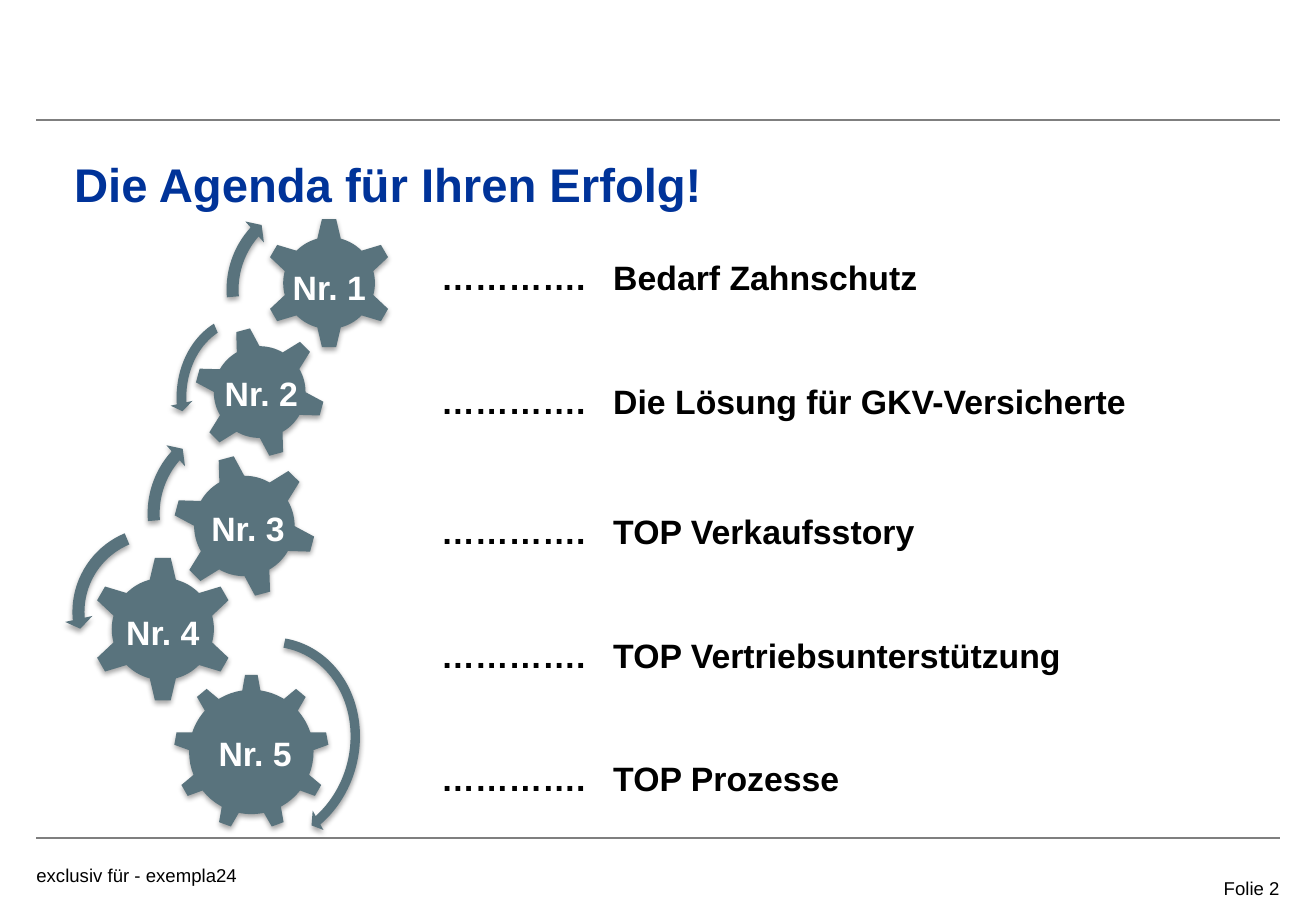
import pptx
import pptx.util
import pptx.dml.color
import pptx.enum.shapes
import pptx.enum.text
import pptx.oxml
import pptx.oxml.ns
import lxml.etree

Cm = pptx.util.Cm
Pt = pptx.util.Pt
RGBColor = pptx.dml.color.RGBColor
MSO_SHAPE = pptx.enum.shapes.MSO_SHAPE
ALIGN = pptx.enum.text.PP_ALIGN
ANCHOR = pptx.enum.text.MSO_ANCHOR
qn = pptx.oxml.ns.qn

FONT = "Arial"
BLACK = RGBColor(0, 0, 0)
WHITE = RGBColor(255, 255, 255)
GREY = RGBColor(0x7F, 0x7F, 0x7F)
BLUE = RGBColor(0x00, 0x33, 0x99)
TEAL = RGBColor(0x59, 0x73, 0x7D)

TITLE = "Die Agenda für Ihren Erfolg!"
FOOTER = "exclusiv für - exempla24"
PAGE = "Folie 2"
DOTS = "…………."
AGENDA = [
    ("Bedarf Zahnschutz", 0),
    ("Die Lösung für GKV-Versicherte", 49.3),
    ("TOP Verkaufsstory", 52.9),
    ("TOP Vertriebsunterstützung", 49.3),
    ("TOP Prozesse", 49.3),
]
GEARS = [
    (MSO_SHAPE.GEAR_6, 5.51, 4.55, 2.74, 0, (5.87, 5.36)),
    (MSO_SHAPE.GEAR_6, 4.06, 6.83, 2.74, 345, (4.45, 7.59)),
    (MSO_SHAPE.GEAR_6, 3.61, 9.5, 3, 345, (4.17, 10.41)),
    (MSO_SHAPE.GEAR_6, 1.88, 11.63, 3.05, 0, (2.39, 12.57)),
    (MSO_SHAPE.GEAR_9, 3.63, 14.1, 3.25, 0, (4.32, 15.11)),
]
UP = (MSO_SHAPE.CIRCULAR_ARROW, (0.06, 3.941, 133.138, 105.082, 0.07))
DOWN = (MSO_SHAPE.LEFT_CIRCULAR_ARROW, (0.065, 4.3, 104.891, 148.378, 0.075))
ROUND = (MSO_SHAPE.CIRCULAR_ARROW, (0.047, 2.99, 24.672, 159.711, 0.055))
ARROWS = [
    (UP, 4.57, 3.96, 4.19, 4.19, 0),
    (DOWN, 3.56, 6.45, 3.12, 3.73, 0),
    (UP, 2.92, 8.64, 4.19, 4.19, 0),
    (DOWN, 1.35, 10.85, 3.89, 3.89, 0),
    (ROUND, 3.45, 13.18, 4.19, 4.7, 14.7),
]
LEFT, RIGHT = 0.76, 26.75
RULES = [2.51, 17.53]
LABEL_WIDTH, LABEL_HEIGHT = 2.03, 1.19
TAB_STOP = 3.6


def add_rule(slide, y):
    line = slide.shapes.add_connector(
        pptx.enum.shapes.MSO_CONNECTOR.STRAIGHT, Cm(LEFT), Cm(y), Cm(RIGHT), Cm(y))
    line.line.color.rgb = GREY
    line.line.width = Pt(1)
    lxml.etree.SubElement(line._element.spPr, qn("a:effectLst"))


def add_wheel(slide, kind, left, top, width, height, rotation, adjustments=()):
    shape = slide.shapes.add_shape(kind, Cm(left), Cm(top), Cm(width), Cm(height))
    for index, value in enumerate(adjustments):
        shape.adjustments[index] = value
    shape.rotation = rotation
    shape.fill.solid()
    shape.fill.fore_color.rgb = TEAL
    shape.line.fill.background()
    shape.shadow.inherit = False
    effects = shape._element.spPr.find(qn("a:effectLst"))
    shadow = lxml.etree.SubElement(
        effects, qn("a:outerShdw"), blurRad="40000", dist="23000",
        dir="5400000", rotWithShape="0")
    color = lxml.etree.SubElement(shadow, qn("a:srgbClr"), val="000000")
    lxml.etree.SubElement(color, qn("a:alpha"), val="35000")


def add_frame(slide, left, top, width, height, wrap=True, anchor=ANCHOR.TOP):
    frame = slide.shapes.add_textbox(Cm(left), Cm(top), Cm(width), Cm(height)).text_frame
    frame.word_wrap = wrap
    frame.vertical_anchor = anchor
    frame.margin_left = frame.margin_right = 0
    frame.margin_top = frame.margin_bottom = 0
    return frame


def add_text(paragraph, text, size, color, bold=False, align=ALIGN.LEFT, spacing=1.1):
    paragraph.alignment = align
    paragraph.line_spacing = spacing
    run = paragraph.add_run()
    run.text = text
    run.font.name = FONT
    run.font.size = Pt(size)
    run.font.bold = bold
    run.font.color.rgb = color


def add_agenda(slide):
    frame = add_frame(slide, 9.22, 5.38, 17.55, 12.15)
    for index, (topic, gap) in enumerate(AGENDA):
        paragraph = frame.add_paragraph() if index else frame.paragraphs[0]
        if gap:
            paragraph.space_before = Pt(gap)
        add_text(paragraph, f"{DOTS}\t{topic}", 20, BLACK, True, spacing=1.0)
        tabs = lxml.etree.SubElement(paragraph._p.get_or_add_pPr(), qn("a:tabLst"))
        lxml.etree.SubElement(tabs, qn("a:tab"), pos=str(Cm(TAB_STOP)), algn="l")


def main():
    presentation = pptx.Presentation()
    presentation.slide_width = Cm(27.51)
    presentation.slide_height = Cm(19.05)
    slide = presentation.slides.add_slide(presentation.slide_layouts[6])

    for y in RULES:
        add_rule(slide, y)
    footer = add_frame(slide, LEFT, 17.53, 6.4, 1.52, anchor=ANCHOR.MIDDLE)
    add_text(footer.paragraphs[0], FOOTER, 11, BLACK, spacing=1.0)
    page = add_frame(slide, 23.75, 18.29, 3, 0.61)
    add_text(page.paragraphs[0], PAGE, 11, BLACK, align=ALIGN.RIGHT)
    title = add_frame(slide, 1.55, 3.12, 25.2, 1.7)
    add_text(title.paragraphs[0], TITLE, 28, BLUE, True)

    for kind, left, top, size, rotation, label in GEARS:
        add_wheel(slide, kind, left, top, size, size, rotation)
    for (kind, adjustments), left, top, width, height, rotation in ARROWS:
        add_wheel(slide, kind, left, top, width, height, rotation, adjustments)
    for number, gear in enumerate(GEARS, 1):
        frame = add_frame(slide, *gear[-1], LABEL_WIDTH, LABEL_HEIGHT, False, ANCHOR.MIDDLE)
        add_text(frame.paragraphs[0], f"Nr. {number}", 20, WHITE, True, ALIGN.CENTER)
    add_agenda(slide)

    presentation.save("out.pptx")


if __name__ == "__main__":
    main()
